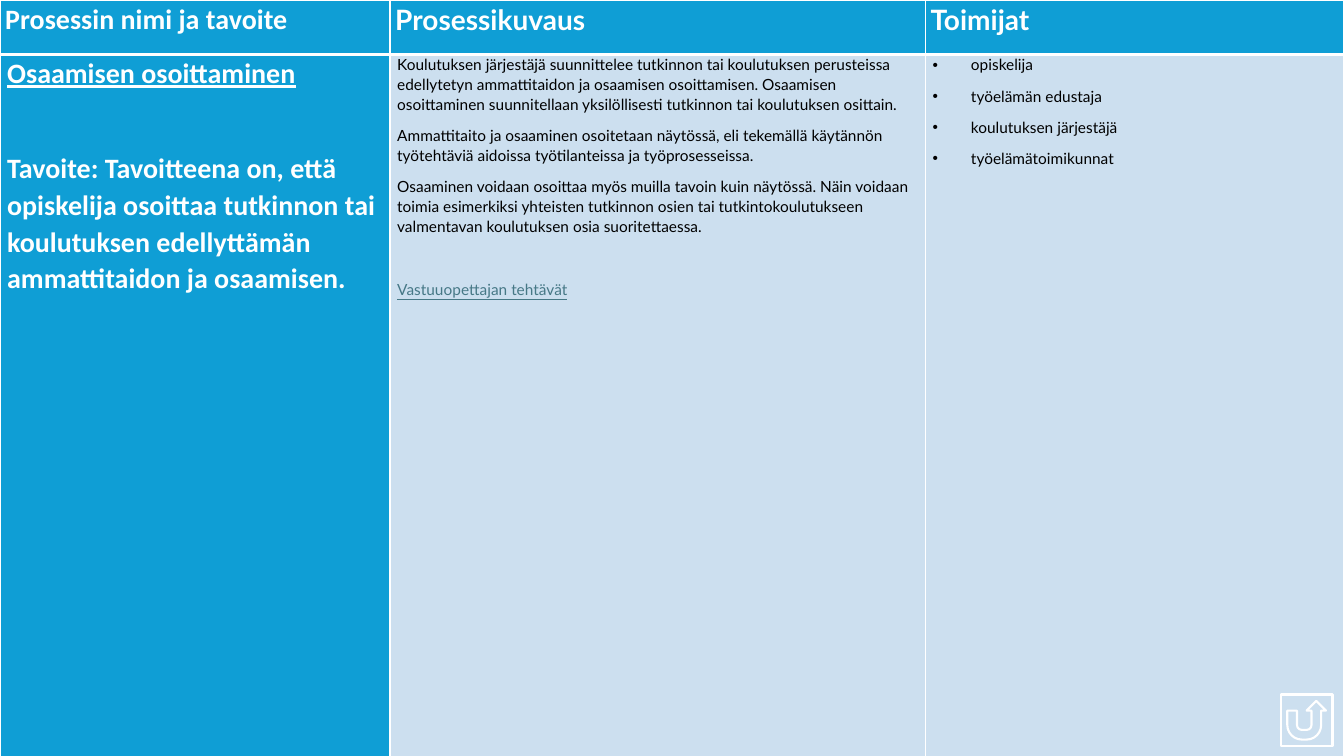
"""Build the process description slide with its three-column table."""
from dataclasses import dataclass

from lxml.etree import SubElement
from pptx import Presentation
from pptx.dml.color import RGBColor
from pptx.enum.shapes import MSO_SHAPE
from pptx.oxml.ns import qn
from pptx.slide import Slide
from pptx.table import _Cell
from pptx.text.text import _Paragraph
from pptx.util import Cm, Pt

WHITE, BLACK, BLUE, PALE, LINK = "FFFFFF", "000000", "0F9ED5", "CCDFEF", "467886"
COLUMN_WIDTHS = (9.83, 13.49, 10.54)
ROW_HEIGHTS = (1.37, 19.02)
BULLET_INDENT = Cm(0.97)


@dataclass(frozen=True)
class Style:
    """Font settings of a paragraph."""
    font: str
    size: float
    color: str
    bold: bool = False
    underline: bool = False


@dataclass(frozen=True)
class Line:
    """One paragraph of a cell."""
    text: str
    style: Style
    space_before: float = 0
    bullet: bool = False


@dataclass(frozen=True)
class CellContent:
    """Paragraphs and look of a table cell."""
    lines: tuple[Line, ...]
    fill: str
    margin: float
    top_border: float
    bottom_border: float


NAME_HEADING = Style("Calibri", 20, WHITE, bold=True)
HEADING = Style("Lato", 20, WHITE, bold=True)
TITLE = Style("Calibri", 20, WHITE, bold=True, underline=True)
BODY = Style("Lato", 11, BLACK)
LINK_STYLE = Style("Lato", 11, LINK, underline=True)


def heading_cell(text: str, style: Style) -> CellContent:
    """Describe a cell of the header row."""
    return CellContent((Line(text, style),), BLUE, 0.13, 1, 3)


def body_cell(fill: str, *lines: Line) -> CellContent:
    """Describe a cell of the content row."""
    return CellContent(lines, fill, 0.18, 3, 1)


ROWS = (
    (
        heading_cell("Prosessin nimi ja tavoite", NAME_HEADING),
        heading_cell("Prosessikuvaus", HEADING),
        heading_cell("Toimijat", HEADING),
    ),
    (
        body_cell(
            BLUE,
            Line("Osaamisen osoittaminen", TITLE),
            Line("Tavoite: Tavoitteena on, että opiskelija osoittaa tutkinnon tai "
                 "koulutuksen edellyttämän ammattitaidon ja osaamisen.",
                 NAME_HEADING, space_before=34),
        ),
        body_cell(
            PALE,
            Line("Koulutuksen järjestäjä suunnittelee tutkinnon tai koulutuksen "
                 "perusteissa edellytetyn ammattitaidon ja osaamisen osoittamisen. "
                 "Osaamisen osoittaminen suunnitellaan yksilöllisesti tutkinnon tai "
                 "koulutuksen osittain.", BODY),
            Line("Ammattitaito ja osaaminen osoitetaan näytössä, eli tekemällä "
                 "käytännön työtehtäviä aidoissa työtilanteissa ja "
                 "työprosesseissa.", BODY),
            Line("Osaaminen voidaan osoittaa myös muilla tavoin kuin näytössä. Näin "
                 "voidaan toimia esimerkiksi yhteisten tutkinnon osien tai "
                 "tutkintokoulutukseen valmentavan koulutuksen osia "
                 "suoritettaessa.", BODY),
            Line("Vastuuopettajan tehtävät", LINK_STYLE, space_before=22.5),
        ),
        body_cell(
            PALE,
            *(Line(actor, BODY, bullet=True) for actor in (
                "opiskelija", "työelämän edustaja",
                "koulutuksen järjestäjä", "työelämätoimikunnat")),
        ),
    ),
)


def rgb(color: str) -> RGBColor:
    """Turn a hex string into a colour."""
    return RGBColor.from_string(color)


def add_border(cell: _Cell, side: str, width: float) -> None:
    """Draw one white border of a cell."""
    border = SubElement(cell._tc.get_or_add_tcPr(), qn(f"a:ln{side}"), w=str(Pt(width)))
    fill = SubElement(border, qn("a:solidFill"))
    SubElement(fill, qn("a:srgbClr"), val=WHITE)


def write_line(para: _Paragraph, line: Line) -> None:
    """Fill and format one paragraph."""
    para.text = line.text
    para.line_spacing = 1.07
    para.space_before = Pt(line.space_before)
    para.space_after = Pt(8)
    for span in para.runs:
        span.font.name = line.style.font
        span.font.size = Pt(line.style.size)
        span.font.bold = line.style.bold
        span.font.underline = line.style.underline
        span.font.color.rgb = rgb(line.style.color)
    if line.bullet:
        properties = para._p.get_or_add_pPr()
        properties.set("marL", str(BULLET_INDENT))
        properties.set("indent", str(-BULLET_INDENT))
        SubElement(properties, qn("a:buFont"), typeface="Arial")
        SubElement(properties, qn("a:buChar"), char="•")


def fill_cell(cell: _Cell, content: CellContent) -> None:
    """Give a cell its margins, borders, fill and text."""
    cell.margin_left = cell.margin_right = Cm(content.margin)
    cell.margin_top = cell.margin_bottom = 0
    borders = {"L": 1, "R": 1, "T": content.top_border, "B": content.bottom_border}
    for side, width in borders.items():
        add_border(cell, side, width)
    cell.fill.solid()
    cell.fill.fore_color.rgb = rgb(content.fill)
    frame = cell.text_frame
    for index, line in enumerate(content.lines):
        para = frame.add_paragraph() if index else frame.paragraphs[0]
        write_line(para, line)


def add_process_table(page: Slide) -> None:
    """Add the table that covers the slide."""
    table = page.shapes.add_table(
        len(ROW_HEIGHTS), len(COLUMN_WIDTHS), 0, 0,
        Cm(sum(COLUMN_WIDTHS)), Cm(sum(ROW_HEIGHTS))).table
    table.horz_banding = False
    for column, width in zip(table.columns, COLUMN_WIDTHS):
        column.width = Cm(width)
    for row, height, contents in zip(table.rows, ROW_HEIGHTS, ROWS):
        row.height = Cm(height)
        for cell, content in zip(row.cells, contents):
            fill_cell(cell, content)


def add_return_button(page: Slide) -> None:
    """Add the outlined return button in the lower right corner."""
    button = page.shapes.add_shape(
        MSO_SHAPE.ACTION_BUTTON_RETURN, Cm(32.28), Cm(17.5), Cm(1.3), Cm(1.3))
    button.shadow.inherit = False
    button.fill.background()
    button.line.color.rgb = rgb(WHITE)
    button.line.width = Pt(1.5)


def main() -> None:
    """Build and save the deck."""
    deck = Presentation()
    deck.slide_width, deck.slide_height = Cm(33.87), Cm(19.05)
    page = deck.slides.add_slide(deck.slide_layouts[6])
    add_process_table(page)
    add_return_button(page)
    deck.save("out.pptx")


if __name__ == "__main__":
    main()
